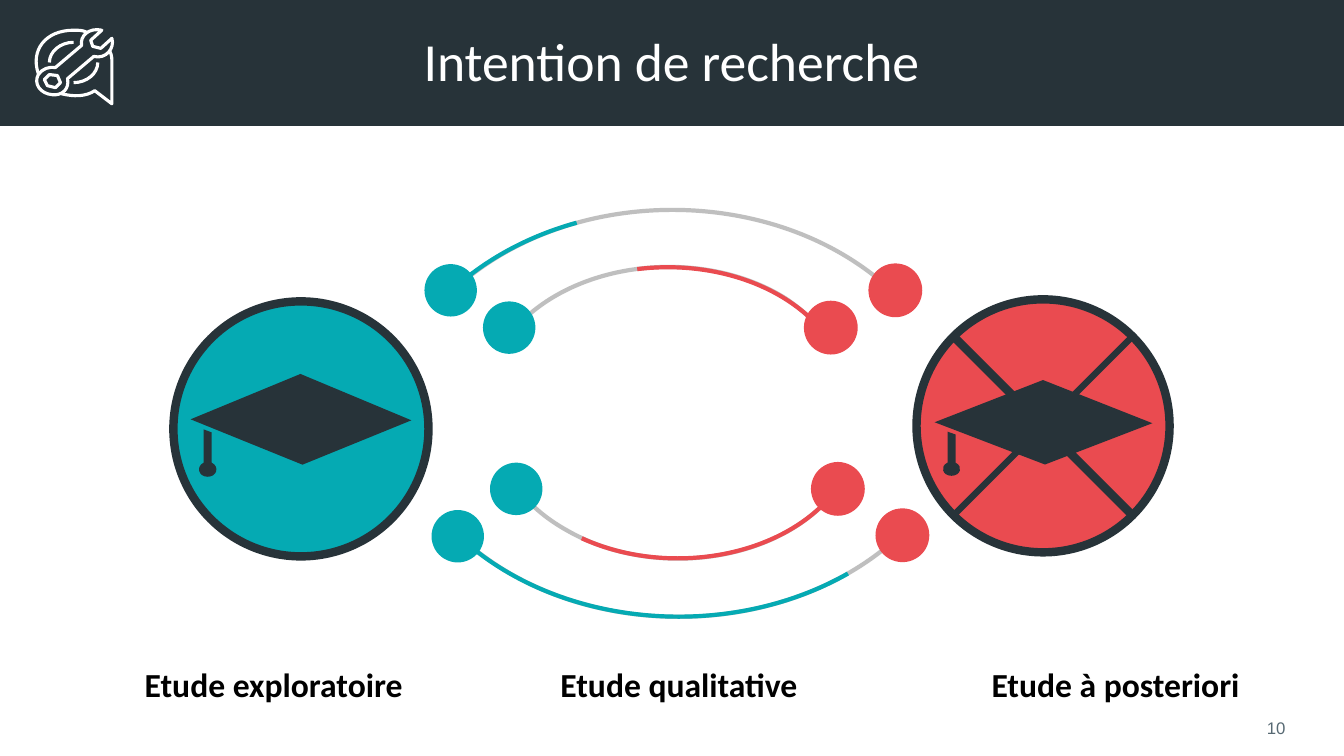
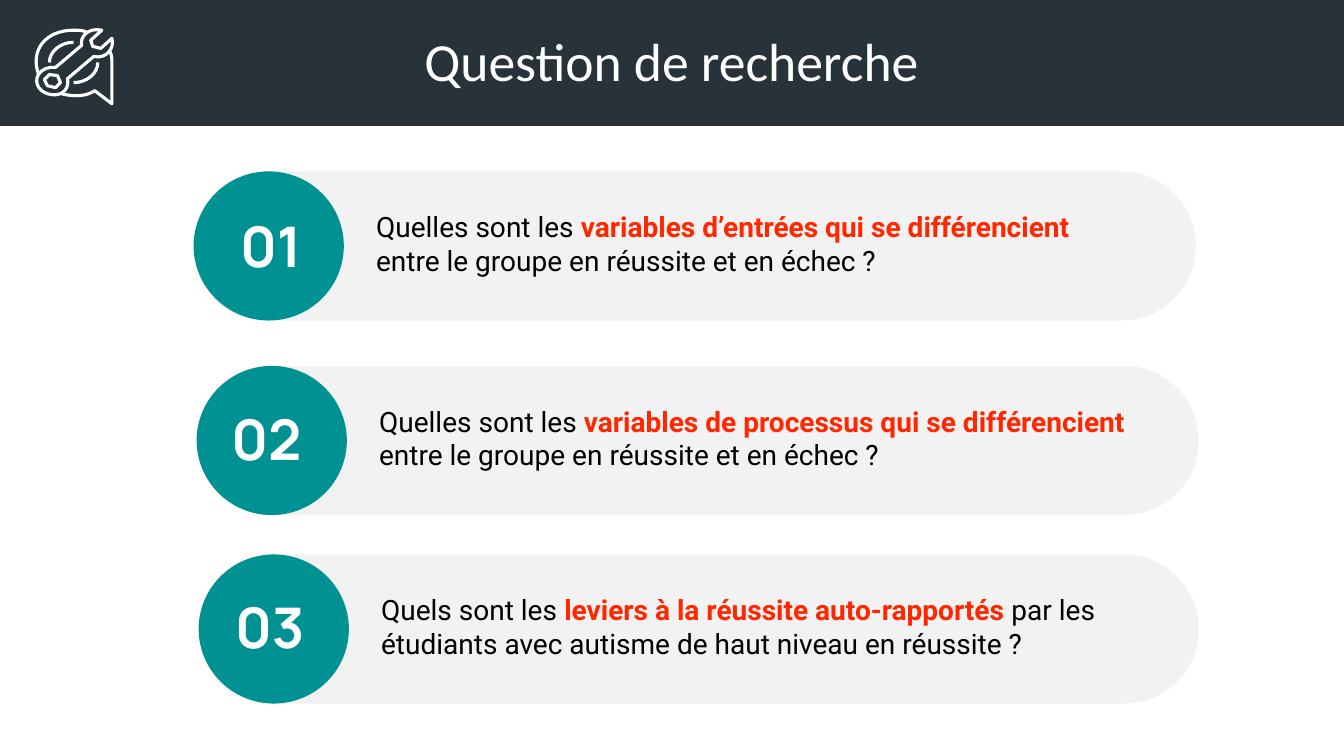
from lxml import etree
from pptx import Presentation
from pptx.dml.color import RGBColor
from pptx.enum import shapes as kinds, text as txt
from pptx.oxml.ns import qn
from pptx.util import Inches, Pt

HUES = {"dark": "273339", "teal": "05AAB3", "red": "EA4B50", "grey": "BFBFBF",
        "white": "FFFFFF", "black": "000000", "disc": "009193", "pill": "F2F2F2",
        "key": "FF2600", "page": "576973"}
KIND = kinds.MSO_SHAPE
LEFT, MID, RIGHT = txt.PP_ALIGN.LEFT, txt.PP_ALIGN.CENTER, txt.PP_ALIGN.RIGHT

ICON = [
    [(.49, .74), (.57, .75), (.6, .82), (.55, .87), (.47, .85), (.44, .79), (.49, .74)],
    [(.97, .62), (.97, .73, .86, .82, .73, .82)],
    [(.73, .42), (.6, .42, .49, .51, .49, .62)],
    [(.55, .67), (.81, .45), (.79, .36, .88, .27, 1.01, .3), (.9, .4), (.92, .46),
     (1, .48), (1.11, .38), (1.14, .48, 1.05, .59, .93, .56), (.67, .78),
     (.69, .88, .62, .95, .52, .94), (.4, .93, .33, .83, .38, .74),
     (.42, .68, .49, .66, .55, .67)],
    [(.38, .73), (.3, .5, .45, .3, .73, .3), (.78, .3, .82, .3, .86, .32)],
    [(1.09, .51), (1.11, .55, 1.11, .58, 1.11, .62), (1.11, 1.03), (.94, .9),
     (.85, .96, .73, .96, .61, .93)],
]
CAP = [
    [(1.09, 0), (0, .45), (1.11, .9), (2.19, .46), (1.09, 0)],
    [(.13, .55), (.13, .88), (.05, .92, .08, 1.02, .17, 1.02),
     (.26, 1.02, .29, .92, .21, .88), (.21, .58), (.13, .55)],
]
ARCS = [
    ("grey", [(4.8, 3.42), (3.71, 4.32, 1.9, 4.36, .76, 3.49),
              (.73, 3.47, .7, 3.44, .67, 3.42)]),
    ("teal", [(4.41, 3.69), (3.23, 4.36, 1.61, 4.23, .63, 3.39)]),
    ("grey", [(4.13, 3.04), (3.52, 3.61, 2.4, 3.71, 1.62, 3.26),
              (1.46, 3.17, 1.33, 3.07, 1.22, 2.95)]),
    ("red", [(4.15, 3.02), (3.59, 3.56, 2.56, 3.7, 1.77, 3.34)]),
    ("grey", [(1.26, 1.11), (1.91, .56, 3.04, .49, 3.79, .96),
              (3.88, 1.02, 3.97, 1.09, 4.04, 1.16)]),
    ("red", [(2.32, .67), (2.97, .59, 3.62, .77, 4.03, 1.15)]),
    ("grey", [(.61, .78), (1.71, -.13, 3.52, -.15, 4.65, .72),
              (4.68, .74, 4.71, .76, 4.73, .78)]),
    ("teal", [(.66, .73), (.96, .5, 1.32, .32, 1.72, .21)]),
]
DOTS = {"teal": [(.21, .62), (.79, .99), (.86, 2.59), (.28, 3.06)],
        "red": [(4.62, .62), (3.98, .99), (4.05, 2.59), (4.69, 3.05)]}
ROWS = [
    (1.92, 1.7, 1.97, (2.16, 2.05), "01", [
        [("Quelles sont les ", 0), ("variables d’entrées qui se différencient", 1)],
        [("entre le groupe en réussite et en échec ?", 0)]]),
    (1.95, 3.63, 2, (2.16, 3.96), "02", [
        [("Quelles sont les ", 0), ("variables de processus qui se différencient", 1)],
        [("entre le groupe en réussite et en échec ?", 0)]]),
    (1.97, 5.5, 2, (2.19, 5.83), "03", [
        [("Quels sont les ", 0), ("leviers à la réussite auto-rapportés", 1),
         (" par les", 0)],
        [("étudiants avec autisme de haut niveau en réussite ?", 0)]]),
]


def tint(name):
    """Give the colour of that name."""
    return RGBColor.from_string(HUES[name])


def paint(shape, fill=None, line=None, width=1):
    """Set the fill and line of a shape and drop its shadow."""
    shape.shadow.inherit = False
    if fill:
        shape.fill.solid()
        shape.fill.fore_color.rgb = tint(fill)
    else:
        shape.fill.background()
    if line:
        shape.line.color.rgb = tint(line)
        shape.line.width = Pt(width)
    else:
        shape.line.fill.background()


def form(slide, kind, box, fill, line=None, width=1):
    """Add a preset shape."""
    shape = slide.shapes.add_shape(kind, *map(Inches, box))
    paint(shape, fill, line, width)
    return shape


def points(parts, steps=24):
    """Turn corners and cubic curves into points that give the bounds."""
    pts = [parts[0]]
    for part in parts[1:]:
        if len(part) == 2:
            pts.append(part)
            continue
        knots = [pts[-1], part[:2], part[2:4], part[4:]]
        for i in range(1, steps + 1):
            t = i / steps
            mix = ((1 - t) ** 3, 3 * t * (1 - t) ** 2, 3 * t * t * (1 - t), t ** 3)
            pts.append(tuple(sum(m * k[a] for m, k in zip(mix, knots)) for a in (0, 1)))
    return pts


def bend(shape, paths, low, close):
    """Give a freeform true curves in place of its line segments."""
    track = next(shape._element.iter(qn("a:path")))
    for node in list(track):
        track.remove(node)
    for parts in paths:
        for i, part in enumerate(parts):
            tag = "moveTo" if i == 0 else "lnTo" if len(part) == 2 else "cubicBezTo"
            step = etree.SubElement(track, qn("a:" + tag))
            for a, b in zip(part[::2], part[1::2]):
                etree.SubElement(step, qn("a:pt"), x=str(Inches(a) - low[0]),
                                 y=str(Inches(b) - low[1]))
        if close:
            etree.SubElement(track, qn("a:close"))


def trace(slide, x, y, paths, fill=None, line=None, width=1, scale=(1, 1)):
    """Draw outlines as one freeform whose origin is x, y."""
    paths = [[tuple(v * scale[i % 2] for i, v in enumerate(part)) for part in parts]
             for parts in paths]
    spots = [(Inches(a), Inches(b)) for parts in paths for a, b in points(parts)]
    build = slide.shapes.build_freeform(*spots[0], scale=1.0)
    build.add_line_segments(spots[1:], close=False)
    shape = build.convert_to_shape(Inches(x), Inches(y))
    bend(shape, paths, [min(axis) for axis in zip(*spots)], bool(fill))
    paint(shape, fill, line, width)


def rule(slide, start, end, width):
    """Draw a straight dark line."""
    line = slide.shapes.add_connector(kinds.MSO_CONNECTOR.STRAIGHT,
                                      *map(Inches, start + end))
    line.line.color.rgb = tint("dark")
    line.line.width = Pt(width)
    etree.SubElement(line._element.spPr, qn("a:effectLst"))


def style(font, face, size, hue, bold=False):
    """Set the look of some text."""
    font.name, font.size, font.bold = face, Pt(size), bold
    font.color.rgb = tint(hue)


def write(slide, box, lines, face, size, hue, bold=False, align=LEFT, mid=False, wrap=True):
    """Add a text box of lines, each a list of (words, key) runs."""
    frame = slide.shapes.add_textbox(*map(Inches, box)).text_frame
    frame.word_wrap = wrap
    frame.margin_left = frame.margin_right = Inches(.05)
    frame.margin_top = frame.margin_bottom = Inches(.05)
    frame.vertical_anchor = txt.MSO_ANCHOR.MIDDLE if mid else txt.MSO_ANCHOR.TOP
    for i, runs in enumerate(lines):
        para = frame.add_paragraph() if i else frame.paragraphs[0]
        para.alignment = align
        for words, key in runs:
            run = para.add_run()
            run.text = words
            style(run.font, face, size, "key" if key else hue, bold or bool(key))
    return frame


def start(deck, title):
    """Add a slide with its band, title and icon."""
    slide = deck.slides.add_slide(deck.slide_layouts[6])
    form(slide, KIND.RECTANGLE, (-.01, -.07, 13.36, 1.32), "dark")
    frame = write(slide, (.91, .27, 11.5, .74), [[(title, 0)]], "Calibri", 38.3,
                  "white", align=MID, mid=True)
    frame.paragraphs[0].line_spacing = .9
    trace(slide, 0, 0, ICON, line="white", width=2.25)
    return slide


def links(slide, x, y):
    """Draw the arcs and their end dots."""
    for hue, arc in ARCS:
        trace(slide, x, y, [arc], line=hue, width=3)
    for hue, spots in DOTS.items():
        for a, b in spots:
            form(slide, KIND.OVAL, (x + a, y + b, .52, .52), hue,
                 "red" if hue == "red" else None)


def badge(slide, x, y, size, hue, cap, cross=False):
    """Draw a ringed disc with a cap, crossed out if asked."""
    form(slide, KIND.OVAL, (x, y, size, size), hue, "dark", 6)
    left, top, wide, high = cap
    trace(slide, x + left, y + top, CAP, "dark", scale=(wide / 2.19, high / 1.02))
    if cross:
        near, far = .37, size - .37
        rule(slide, (x + near, y + near), (x + far, y + far), 6)
        rule(slide, (x + far, y + near), (x + near, y + far), 4.5)


def entry(slide, x, y, left, spot, label, lines):
    """Place one numbered question."""
    pill = form(slide, KIND.ROUNDED_RECTANGLE, (left, y, 9.89, 1.48), "pill")
    pill.adjustments[0] = .5
    form(slide, KIND.OVAL, (x, y, 1.49, 1.48), "disc")
    write(slide, (*spot, .88, .77), [[(label, 0)]], "Manrope", 40, "white",
          True, RIGHT, True)
    write(slide, (x + 1.76, y + .33, 7.8, .74), lines, "Roboto", 20, "black", wrap=False)


def intent(deck):
    """Build the slide on the aim of the study."""
    slide = start(deck, "Intention de recherche")
    links(slide, 4, 2)
    badge(slide, 1.72, 2.99, 2.53, "teal", (.17, .72, 2.19, 1.02))
    badge(slide, 9.09, 2.97, 2.51, "red", (.18, .8, 2.16, .95), True)
    for x, name in ((.88, "Etude exploratoire"), (4.9, "Etude qualitative"),
                    (9.23, "Etude à posteriori")):
        write(slide, (x, 6.54, 3.67, .49), [[(name, 0)]], "Calibri", 24, "black", True, MID)
    write(slide, (12.3, 7.07, .5, .29), [[("10", 0)]], "Arial", 12, "page",
          align=RIGHT, mid=True)


def query(deck):
    """Build the slide of numbered questions."""
    slide = start(deck, "Question de recherche")
    for row in ROWS:
        entry(slide, *row)


def main():
    """Build and save the deck."""
    deck = Presentation()
    deck.slide_width, deck.slide_height = Inches(13.33), Inches(7.5)
    intent(deck)
    query(deck)
    deck.save("out.pptx")


if __name__ == "__main__":
    main()
